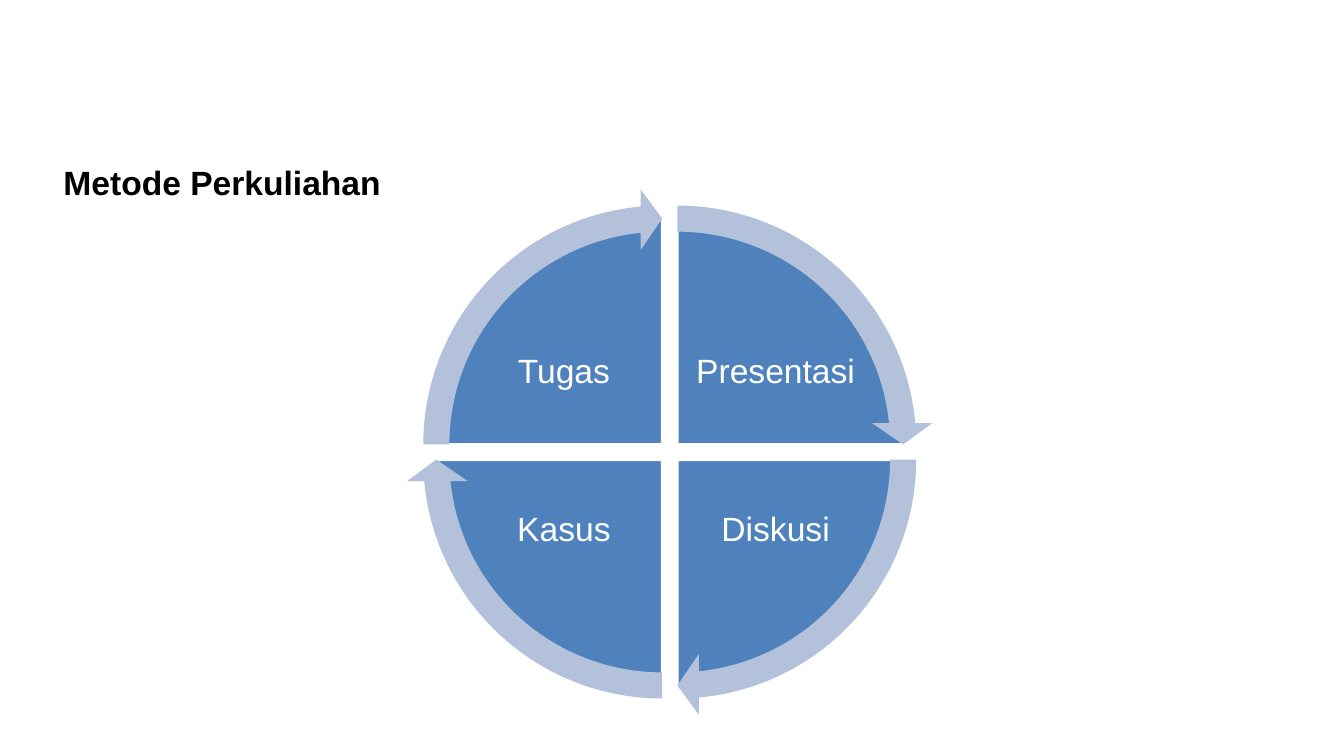
from pptx import Presentation
from pptx import util as u
from pptx.dml.color import RGBColor
from pptx.enum import shapes, text


def rgb(value):
    return RGBColor.from_string(value)


def add_label(s, box, words, color, margin, bold=False):
    sp = s.shapes.add_textbox(*[u.Pt(v) for v in box])
    tf = sp.text_frame
    tf.word_wrap = True
    tf.vertical_anchor = text.MSO_ANCHOR.MIDDLE
    tf.margin_left = tf.margin_right = u.Pt(margin)
    tf.margin_top = tf.margin_bottom = u.Pt(margin)
    p = tf.paragraphs[0]
    p.text = words
    font = p.runs[0].font
    font.name, font.size, font.bold = "Arial", u.Pt(24), bold
    font.color.rgb = rgb(color)
    return p


prs = Presentation()
prs.slide_width, prs.slide_height = u.Pt(960), u.Pt(540)
s = prs.slides.add_slide(prs.slide_layouts[6])

add_label(s, (38.2, 105.1, 874, 50.4), "Metode Perkuliahan", "000000", 7.2, True)

FULL_TURN, QUARTER = 216, 54
PIE, RING = 325.4, 365.8
quadrants = [
    ("Presentasi", 1, -1),
    ("Diskusi", 1, 1),
    ("Kasus", -1, 1),
    ("Tugas", -1, -1),
]
arrows = []

for i, (words, right, down) in enumerate(quadrants):
    start = (162 + i * QUARTER) % FULL_TURN
    end = (start + QUARTER) % FULL_TURN
    cx, cy = 478.4 + 5.4 * right, 322.9 + 5.4 * down
    arrows.append((cx, cy, start))

    sp = s.shapes.add_shape(shapes.MSO_SHAPE.PIE, u.Pt(cx - PIE / 2),
                            u.Pt(cy - PIE / 2), u.Pt(PIE), u.Pt(PIE))
    sp.shadow.inherit = False
    sp.adjustments[0], sp.adjustments[1] = start, end
    sp.fill.solid()
    sp.fill.fore_color.rgb = rgb("4F81BD")
    sp.line.color.rgb = rgb("FFFFFF")
    sp.line.width = u.Pt(2)

    box = (418.3 + 75.6 * right, 277.95 + 56.15 * down, 120.2, 89.3)
    p = add_label(s, box, words, "FFFFFF", 2.4)
    p.alignment = text.PP_ALIGN.CENTER
    p.line_spacing = 0.9

for cx, cy, start in arrows:
    sp = s.shapes.add_shape(shapes.MSO_SHAPE.CIRCULAR_ARROW, u.Pt(cx - RING / 2),
                            u.Pt(cy - RING / 2), u.Pt(RING), u.Pt(RING))
    sp.shadow.inherit = False
    head = 3.275
    for n, value in enumerate((0.051, head, start + QUARTER - head, start, 0.059)):
        sp.adjustments[n] = value
    sp.fill.solid()
    sp.fill.fore_color.rgb = rgb("B3C1DB")
    sp.line.fill.background()

prs.save("out.pptx")
